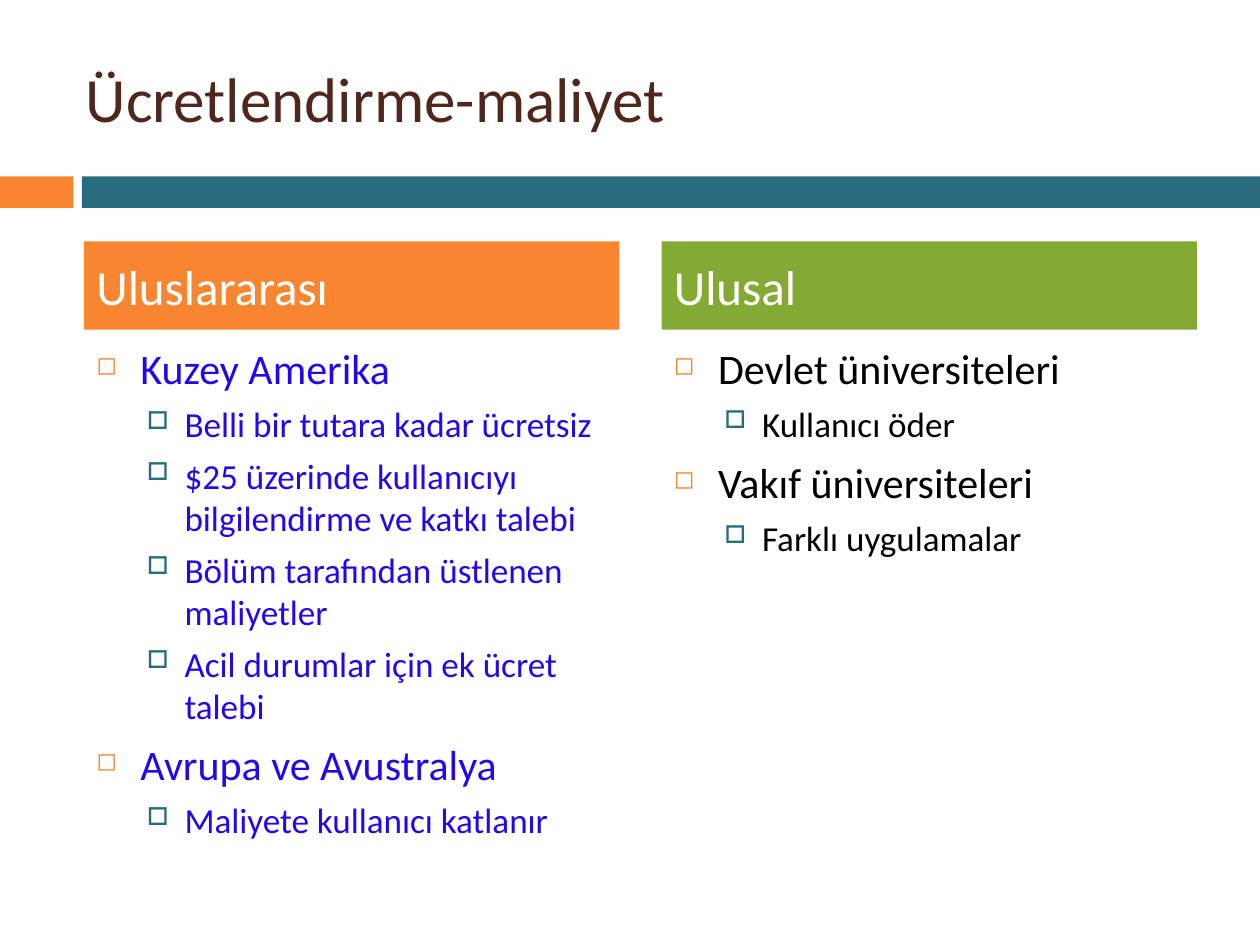
import pptx
import pptx.util
import pptx.dml.color
import pptx.enum.shapes
import pptx.enum.text
import pptx.oxml.ns
import lxml.etree

RGB = pptx.dml.color.RGBColor
ORANGE = RGB(0xF8, 0x86, 0x30)
TEAL = RGB(0x29, 0x6C, 0x7D)
GREEN = RGB(0x84, 0xAA, 0x33)
BROWN = RGB(0x4F, 0x27, 0x1C)
BLUE = RGB(0x23, 0x09, 0xE7)
BLACK = RGB(0, 0, 0)
WHITE = RGB(255, 255, 255)

COLS, ROWS = 120, 90
MIDDLE = pptx.enum.text.MSO_ANCHOR.MIDDLE
LEFT = pptx.enum.text.PP_ALIGN.LEFT

# Per level: text indent, hanging indent (inches), space before, bullet
LEVELS = [
    {"left": 0.35, "hang": 0.35, "gap": 7, "mark": "◻", "color": ORANGE, "share": 60},
    {"left": 0.7, "hang": 0.3, "gap": 5.5, "mark": "□", "color": TEAL, "share": 70},
]

# Heading, heading fill, text colour, sizes by level, (level, text) items
PANELS = [
    ("Uluslararası", ORANGE, BLUE, (24, 20.1), [
        (0, "Kuzey Amerika"),
        (1, "Belli bir tutara kadar ücretsiz"),
        (1, "$25 üzerinde kullanıcıyı bilgilendirme ve katkı talebi"),
        (1, "Bölüm tarafından üstlenen maliyetler"),
        (1, "Acil durumlar için ek ücret talebi"),
        (0, "Avrupa ve Avustralya"),
        (1, "Maliyete kullanıcı katlanır"),
    ]),
    ("Ulusal", GREEN, BLACK, (24, 20), [
        (0, "Devlet üniversiteleri"),
        (1, "Kullanıcı öder"),
        (0, "Vakıf üniversiteleri"),
        (1, "Farklı uygulamalar"),
    ]),
]


class Page:
    """Draws on one slide; boxes are (column, row, columns, rows)."""

    font = "Calibri"

    def __init__(self, deck):
        self.slide = deck.slides.add_slide(deck.slide_layouts[6])
        self.cell = (deck.slide_width / COLS, deck.slide_height / ROWS)

    def place(self, box):
        wide, high = self.cell
        return [round(n * unit) for n, unit in zip(box, (wide, high, wide, high))]

    def bar(self, box, fill):
        kind = pptx.enum.shapes.MSO_SHAPE.RECTANGLE
        shape = self.slide.shapes.add_shape(kind, *self.place(box))
        shape.shadow.inherit = False
        shape.fill.solid()
        shape.fill.fore_color.rgb = fill
        shape.line.fill.background()
        return shape

    def frame(self, box):
        frame = self.slide.shapes.add_textbox(*self.place(box)).text_frame
        frame.word_wrap = True
        return frame

    def label(self, para, text, size, color, gap=0):
        para.alignment = LEFT
        para.space_before = pptx.util.Pt(gap)
        run = para.add_run()
        run.text = text
        style = {"name": self.font, "size": pptx.util.Pt(size)}
        for key, value in style.items():
            setattr(run.font, key, value)
        run.font.color.rgb = color

    def title(self, box, text):
        frame = self.frame(box)
        frame.vertical_anchor = MIDDLE
        self.label(frame.paragraphs[0], text, 36, BROWN)

    def header(self, box, text, fill):
        frame = self.bar(box, fill).text_frame
        frame.vertical_anchor = MIDDLE
        self.label(frame.paragraphs[0], text, 28, WHITE, 7)

    def bullet(self, para, level):
        """Adds the level's indent and bullet, after the spacing is set."""
        props = para._p.get_or_add_pPr()
        props.set("marL", str(pptx.util.Inches(level["left"])))
        props.set("indent", str(-pptx.util.Inches(level["hang"])))

        def add(parent, tag, **values):
            node = lxml.etree.SubElement(parent, pptx.oxml.ns.qn(tag))
            for key, value in values.items():
                node.set(key, value)
            return node

        add(add(props, "a:buClr"), "a:srgbClr", val=str(level["color"]))
        add(props, "a:buSzPct", val=str(level["share"] * 1000))
        add(props, "a:buChar", char=level["mark"])

    def items(self, box, rows, sizes, color):
        frame = self.frame(box)
        for i, (depth, text) in enumerate(rows):
            para = frame.add_paragraph() if i else frame.paragraphs[0]
            para.level = depth
            level = LEVELS[depth]
            self.label(para, text, sizes[depth], color, level["gap"])
            self.bullet(para, level)


def main():
    deck = pptx.Presentation()
    deck.slide_width = pptx.util.Inches(10)
    deck.slide_height = pptx.util.Inches(7.5)
    page = Page(deck)

    page.bar((0, 16.8, 7, 3), ORANGE)
    page.bar((7.8, 16.8, COLS - 7.8, 3), TEAL)
    page.title((7, 3.6, 107, 11.4), "Ücretlendirme-maliyet")

    width, space = 51, 4
    for i, (head, fill, color, sizes, rows) in enumerate(PANELS):
        left = 8 + i * (width + space)
        page.items((left, 32, width, 47), rows, sizes, color)
        page.header((left, 23, width, 8.4), head, fill)

    deck.save("out.pptx")


if __name__ == "__main__":
    main()
